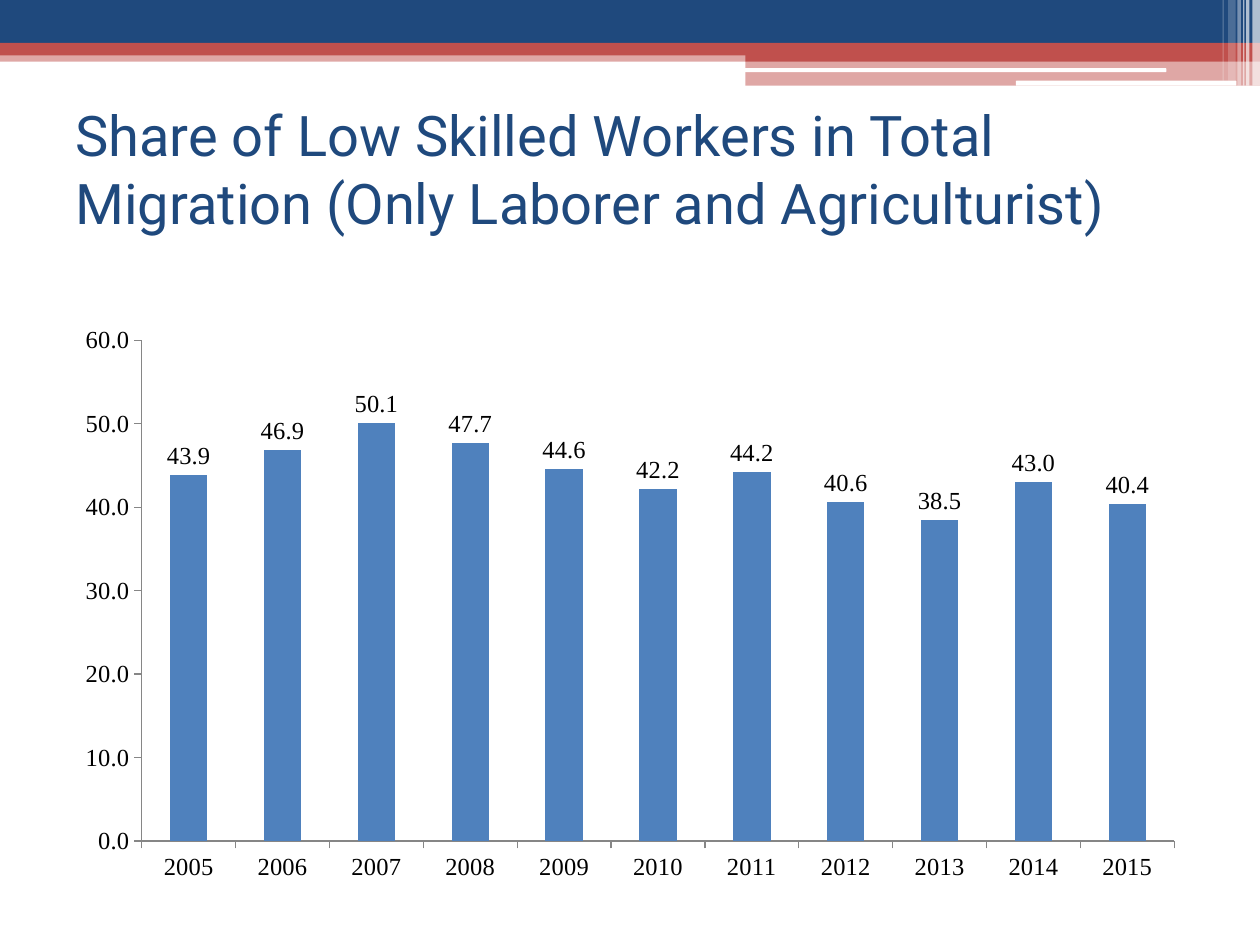
from lxml import etree
from pptx import Presentation
from pptx import util as u
from pptx.chart.data import CategoryChartData
from pptx.dml.color import RGBColor
from pptx.enum import chart as charts
from pptx.enum import shapes, text
from pptx.oxml.ns import qn

NAVY, RED, WHITE, BLUE, GRAY = "1F497D", "C0504D", "FFFFFF", "4F81BD", "868686"
SHARES = {
    "2005": 43.9, "2006": 46.9, "2007": 50.1, "2008": 47.7, "2009": 44.6, "2010": 42.2,
    "2011": 44.2, "2012": 40.6, "2013": 38.5, "2014": 43.0, "2015": 40.4,
}


def paint(target, color, opacity=100):
    """Give a fill or line format a solid colour with an opacity in percent."""
    fill = getattr(target, "fill", target)
    fill.solid()
    fill.fore_color.rgb = RGBColor.from_string(color)
    if opacity < 100:
        tint = target._xPr.find(".//" + qn("a:srgbClr"))
        etree.SubElement(tint, qn("a:alpha"), val=str(opacity * 1000))


def add_bar(page, box, color, opacity=100, rounded=False):
    """Draw one borderless bar of the header."""
    kind = shapes.MSO_SHAPE.ROUNDED_RECTANGLE if rounded else shapes.MSO_SHAPE.RECTANGLE
    bar = page.shapes.add_shape(kind, *map(u.Pt, box))
    bar.shadow.inherit = False
    paint(bar.fill, color, opacity)
    bar.line.fill.background()


def add_header(page, box):
    """Stack the coloured bands, the white cuts and the fading stripes at the right."""
    left, top, width, height = box
    right = left + width
    half = left + 426
    bands = [
        (left, 28.8, 6.5, RED, 50), (left, 0, 24.5, NAVY, 100), (left, 24.5, 7.2, RED, 100),
        (half, 28, 7.2, RED, 100), (half, 35.2, height - 35.2, RED, 50),
    ]
    for start, drop, depth, color, opacity in bands:
        add_bar(page, (start, top + drop, right - start, depth), color, opacity)
    for start, drop, length, depth in [(425.5, 39, 241, 2.2), (580.5, 46.1, 126, 2.9)]:
        add_bar(page, (left + start, top + drop, length, depth), WHITE, rounded=True)
    stripes = [
        (4.4, 4.4, height, 65), (8, 2, height, 65), (9.6, 0.7, height, 60),
        (12.9, 2, height, 40), (18.2, 4.3, 46.1, 20), (21.4, 0.7, 46.1, 30),
    ]
    for offset, thickness, depth, opacity in stripes:
        add_bar(page, (right - offset, top, thickness, depth), WHITE, opacity)


def add_title(page, box, words):
    """Write the title, centred vertically in its box."""
    frame = page.shapes.add_textbox(*map(u.Pt, box)).text_frame
    frame.word_wrap = True
    frame.vertical_anchor = text.MSO_ANCHOR.MIDDLE
    para = frame.paragraphs[0]
    para.text = words
    para.font.name = "Roboto"
    para.font.size = u.Pt(32)
    para.font.color.rgb = RGBColor.from_string(NAVY)


def add_share_chart(page, box, shares):
    """Plot the yearly shares as labelled columns."""
    data = CategoryChartData(number_format="0.0")
    data.categories = list(shares)
    data.add_series("Series 1", list(shares.values()))
    kind = charts.XL_CHART_TYPE.COLUMN_CLUSTERED
    chart = page.shapes.add_chart(kind, *map(u.Pt, box), data).chart
    chart.has_legend = chart.has_title = False
    chart.font.name = "Times New Roman"
    chart.font.size = u.Pt(14)
    chart.font.color.rgb = RGBColor.from_string("000000")
    for axis in (chart.category_axis, chart.value_axis):
        axis.major_tick_mark = charts.XL_TICK_MARK.OUTSIDE
        axis.minor_tick_mark = charts.XL_TICK_MARK.NONE
        axis.format.line.width = u.Pt(0.75)
        paint(axis.format.line, GRAY)
    scale = chart.value_axis
    scale.minimum_scale, scale.maximum_scale, scale.major_unit = 0, 60, 10
    scale.tick_labels.number_format = "0.0"
    scale.tick_labels.number_format_is_linked = False
    scale.major_gridlines.format.line.width = u.Pt(0.75)
    paint(scale.major_gridlines.format.line, WHITE)
    plot = chart.plots[0]
    plot.gap_width = 150
    plot.vary_by_categories = False
    paint(plot.series[0].format.fill, BLUE)
    plot.has_data_labels = True
    labels = plot.data_labels
    labels.show_value = True
    labels.number_format = "0.0"
    labels.number_format_is_linked = False
    labels.position = charts.XL_LABEL_POSITION.OUTSIDE_END


def main():
    """Build the slide and save the deck."""
    deck = Presentation()
    deck.slide_width, deck.slide_height = u.Pt(720), u.Pt(540)
    page = deck.slides.add_slide(deck.slide_layouts[6])
    add_header(page, (0, 0, 720, 49))
    add_title(
        page, (36, 54, 648, 84),
        "Share of Low Skilled Workers in Total Migration (Only Laborer and Agriculturist)",
    )
    add_share_chart(page, (36, 180, 648, 330), SHARES)
    deck.save("out.pptx")


if __name__ == "__main__":
    main()
